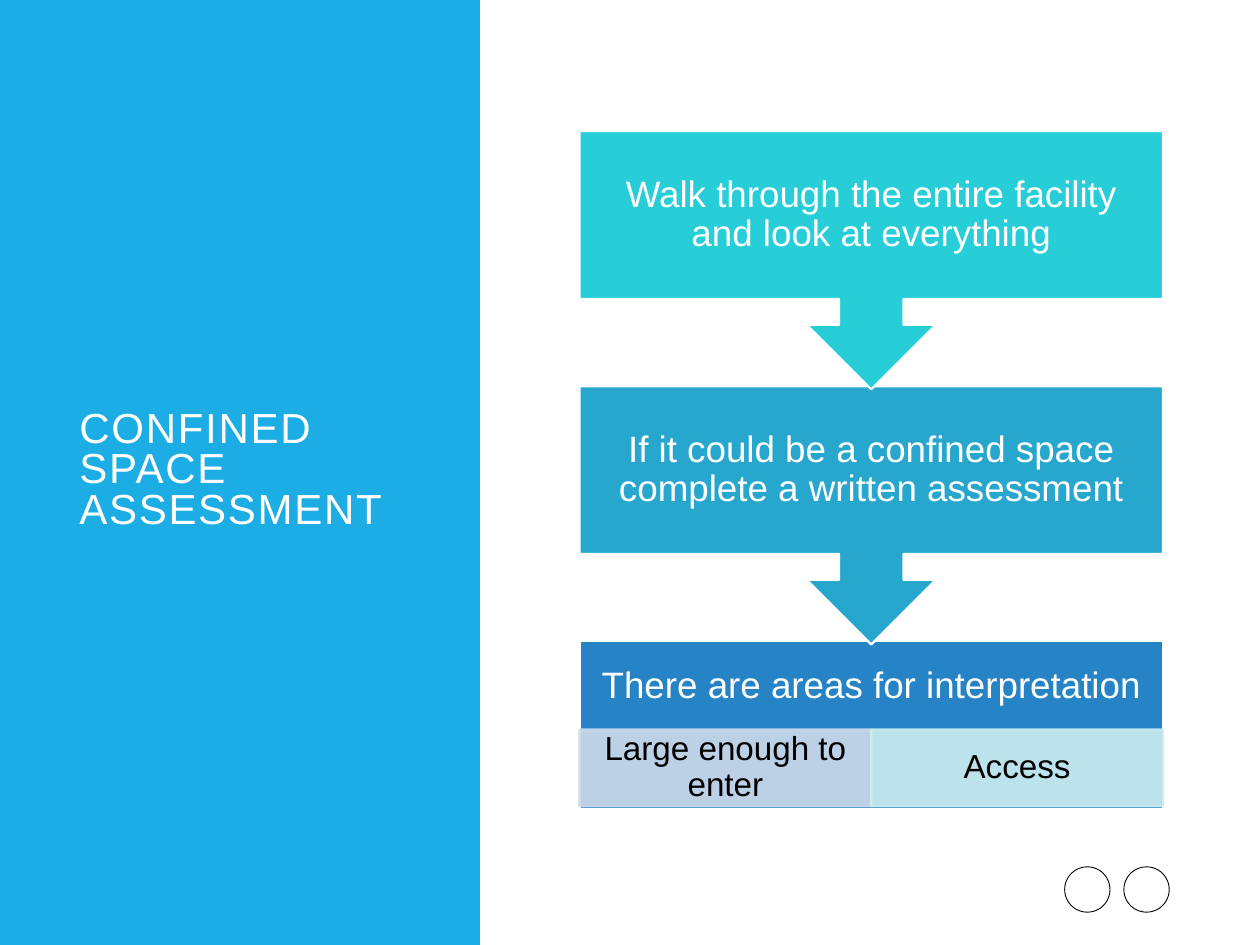
from lxml.etree import SubElement as Sub
from pptx import Presentation
from pptx.dml.color import RGBColor
from pptx.enum.shapes import MSO_SHAPE as Geo
from pptx.enum.text import MSO_ANCHOR as Anchor, MSO_AUTO_SIZE as Fit, PP_ALIGN as Align
from pptx.oxml.ns import qn
from pptx.util import Inches, Pt

WIDE, HIGH = 10, 7.5
TITLE = "CONFINED SPACE ASSESSMENT"
STEPS = [
    ("Walk through the entire facility and look at everything", "27CED7"),
    ("If it could be a confined space complete a written assessment", "27A7CE"),
]
LAST = ("There are areas for interpretation", "2683C6")
CELLS = [("Large enough to enter", "CDD9EA"), ("Access", "CDEDF0")]

LEFT, TOP, SPAN = 4.6, 1.04, 4.63
PITCH, CALL = 2.025, 2.05
BOX, ROW, HEAD = 1.33, 0.61, 0.7
RING, GAP, RINGS = 0.36, 0.11, 2


def tint(hue):
    return RGBColor.from_string(hue)


def fade(fill, share):
    mark = fill._xPr.find(qn("a:solidFill"))[0]
    Sub(mark, qn("a:alpha")).set("val", str(share * 1000))


def write(shape, text, size=21, hue="FFFFFF", align=Align.CENTER, lead=0.9, pad=(0.16,) * 4, track=0):
    frame = shape.text_frame
    frame.word_wrap = True
    frame.auto_size = Fit.NONE
    frame.vertical_anchor = Anchor.MIDDLE
    sides = [Inches(p) for p in pad]
    frame.margin_left, frame.margin_top, frame.margin_right, frame.margin_bottom = sides
    para = frame.paragraphs[0]
    para.alignment, para.line_spacing = align, lead
    run = para.add_run()
    run.text = text
    font = run.font
    font.name, font.size, font.color.rgb = "Arial", Pt(size), tint(hue)
    if track:
        run._r.get_or_add_rPr().set("spc", str(track * 100))


def draw(slide, geo, spot, fill=None, line=None, width=1.25, alpha=None):
    shape = slide.shapes.add_shape(geo, *[Inches(v) for v in spot])
    shape.shadow.inherit = False
    for part, hue in ((shape.fill, fill), (shape.line.fill, line)):
        if hue is None:
            part.background()
            continue
        part.solid()
        part.fore_color.rgb = tint(hue)
        if alpha:
            fade(part, alpha)
    if line:
        shape.line.width = Pt(width)
    return shape


def main():
    deck = Presentation()
    deck.slide_width, deck.slide_height = Inches(WIDE), Inches(HIGH)
    slide = deck.slides.add_slide(deck.slide_layouts[5])
    title = slide.shapes.title

    for col in range(RINGS):
        x = 8.45 + col * (RING + GAP)
        draw(slide, Geo.OVAL, (x, 6.88, RING, RING), line="000000", width=0.5)

    draw(slide, Geo.RECTANGLE, (0, 0, 3.81, HIGH), "1CADE4")
    slide.shapes._spTree.append(title._element)
    title.left, title.top, title.width, title.height = [Inches(v) for v in (0.53, 0.7, 2.8, 6.09)]
    write(title, TITLE, size=24, align=Align.LEFT, lead=0.8, pad=(0.1, 0.05, 0.1, 0.05), track=1)

    base = TOP + len(STEPS) * PITCH
    text, hue = LAST
    shape = draw(slide, Geo.RECTANGLE, (LEFT, base, SPAN, BOX), hue, "FFFFFF")
    write(shape, text, pad=(0.16, 0.16, 0.16, 0.16 + ROW))

    wide = SPAN / len(CELLS)
    for col, (text, hue) in enumerate(CELLS):
        spot = (LEFT + col * wide, base + HEAD, wide, ROW)
        shape = draw(slide, Geo.RECTANGLE, spot, hue, hue, alpha=90)
        write(shape, text, size=19, hue="000000", pad=(0.15, 0.03, 0.15, 0.03))

    for row, (text, hue) in reversed(list(enumerate(STEPS))):
        spot = (LEFT, TOP + row * PITCH, SPAN, CALL)
        write(draw(slide, Geo.DOWN_ARROW_CALLOUT, spot, hue, "FFFFFF"), text)

    deck.save("out.pptx")


if __name__ == "__main__":
    main()
